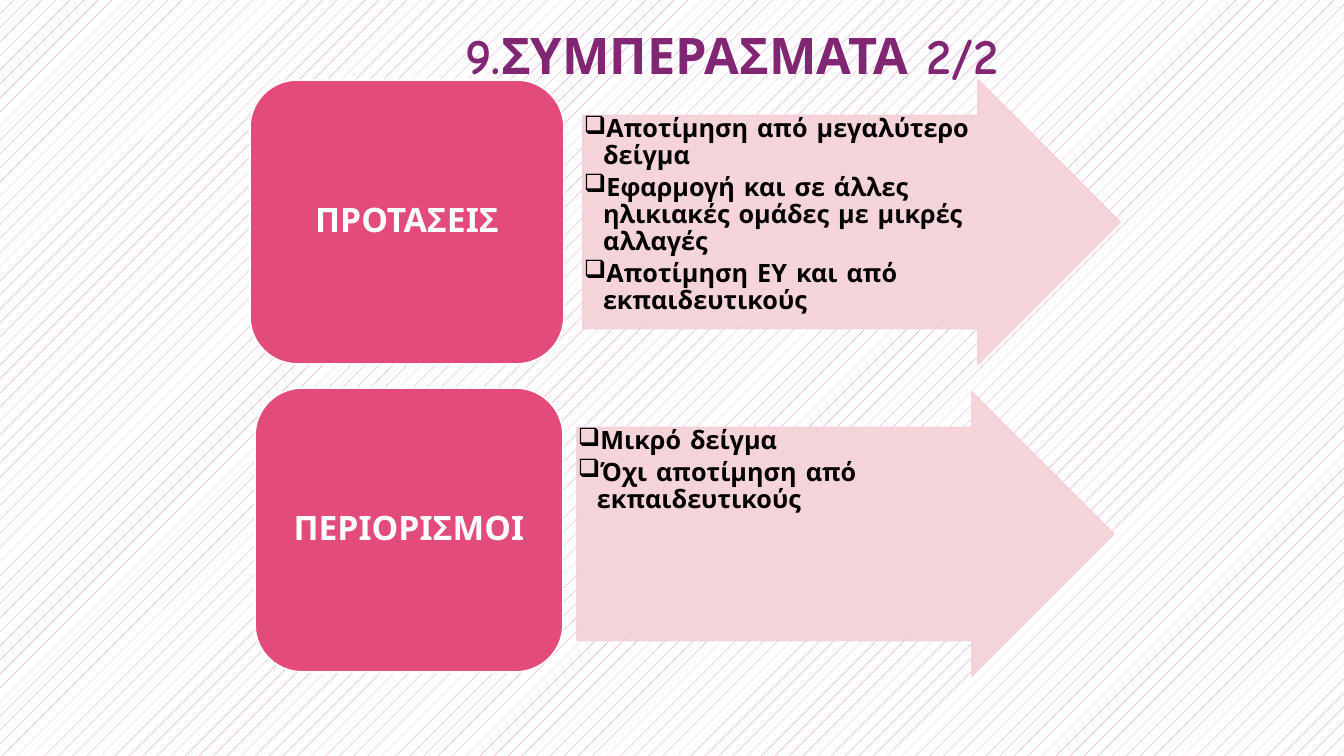
from lxml.etree import SubElement
from pptx import Presentation
from pptx.dml.color import RGBColor
from pptx.enum.dml import MSO_PATTERN
from pptx.enum.shapes import MSO_SHAPE
from pptx.enum.text import MSO_ANCHOR, PP_ALIGN
from pptx.oxml.ns import qn
from pptx.util import Emu, Pt

SLIDE_SIZE = (1344, 756)
SCALE = 12192000 / SLIDE_SIZE[0]
FONT = "Comic Neue"
COLOURS = {
    "title": "812673",
    "card": "E34B7A",
    "arrow": "F4D0D7",
    "pattern": "D87ACA",
    "white": "FFFFFF",
    "black": "000000",
}
CARD_PADDING = 14
ARROW_SIZE = (537, 284)
ARROW_TEXT_SIZE = (431, 214)
TITLE_FORMAT = {"alignment": PP_ALIGN.CENTER, "line_spacing": 0.9}
CARD_FORMAT = {"alignment": PP_ALIGN.CENTER, "line_spacing": 0.9}
BULLET_FORMAT = {"level": 1, "line_spacing": 0.9, "space_after": Pt(3)}
CENTRED_FRAME = {"word_wrap": True, "vertical_anchor": MSO_ANCHOR.MIDDLE}
ARROW_FRAME = {
    "word_wrap": True,
    "vertical_anchor": MSO_ANCHOR.TOP,
    **{f"margin_{side}": Emu(9144) for side in ("left", "top", "right", "bottom")},
}
ROWS = [
    {
        "heading": "ΠΡΟΤΑΣΕΙΣ",
        "card": (250, 80, 314, 284),
        "arrow": (583, 80),
        "points": [
            "Αποτίμηση από μεγαλύτερο δείγμα",
            "Εφαρμογή και σε άλλες ηλικιακές ομάδες με μικρές αλλαγές",
            "Αποτίμηση ΕΥ και από εκπαιδευτικούς",
        ],
    },
    {
        "heading": "ΠΕΡΙΟΡΙΣΜΟΙ",
        "card": (255, 388, 308, 284),
        "arrow": (577, 392),
        "points": ["Μικρό δείγμα", "Όχι αποτίμηση από εκπαιδευτικούς"],
    },
]


def px(length):
    return Emu(round(length * SCALE))


def colour(name):
    return RGBColor.from_string(COLOURS[name])


def set_attributes(target, values):
    for name, value in values.items():
        setattr(target, name, value)


def set_background(slide):
    fill = slide.background.fill
    fill.patterned()
    fill.pattern = MSO_PATTERN.PERCENT_5
    fill.fore_color.rgb = colour("pattern")
    fill.back_color.rgb = colour("white")


def add_bullet(paragraph):
    properties = paragraph._p.get_or_add_pPr()
    properties.set("marL", str(px(19)))
    properties.set("indent", str(-px(19)))
    SubElement(properties, qn("a:buChar")).set("char", "❑")


def add_text(slide, box, texts, size, colour_name, frame_format, paragraph_format, bulleted=False):
    frame = slide.shapes.add_textbox(*map(px, box)).text_frame
    set_attributes(frame, frame_format)
    for index, text in enumerate(texts):
        paragraph = frame.add_paragraph() if index else frame.paragraphs[0]
        if bulleted:
            add_bullet(paragraph)
        set_attributes(paragraph, paragraph_format)
        run = paragraph.add_run()
        run.text = text
        set_attributes(run.font, {"name": FONT, "size": Pt(size), "bold": True})
        run.font.color.rgb = colour(colour_name)


def add_panel(slide, kind, box, fill_name, line_name):
    shape = slide.shapes.add_shape(kind, *map(px, box))
    shape.shadow.inherit = False
    shape.fill.solid()
    shape.fill.fore_color.rgb = colour(fill_name)
    shape.line.color.rgb = colour(line_name)
    shape.line.width = Pt(1.25)
    return shape


def add_arrow(slide, left, top, points):
    arrow = add_panel(slide, MSO_SHAPE.RIGHT_ARROW, (left, top, *ARROW_SIZE), "arrow", "arrow")
    arrow.adjustments[0] = 0.75
    arrow.adjustments[1] = 0.5
    for colour_element in arrow._element.spPr.iter(qn("a:srgbClr")):
        SubElement(colour_element, qn("a:alpha")).set("val", "90000")
    text_top = top + (ARROW_SIZE[1] - ARROW_TEXT_SIZE[1]) // 2
    box = (left, text_top, *ARROW_TEXT_SIZE)
    add_text(slide, box, points, 18, "black", ARROW_FRAME, BULLET_FORMAT, bulleted=True)


def add_card(slide, box, heading):
    add_panel(slide, MSO_SHAPE.ROUNDED_RECTANGLE, box, "card", "white")
    left, top, width, height = box
    text_box = (
        left + CARD_PADDING,
        top + CARD_PADDING,
        width - 2 * CARD_PADDING,
        height - 2 * CARD_PADDING,
    )
    add_text(slide, text_box, [heading], 24, "white", CENTRED_FRAME, CARD_FORMAT)


def main():
    presentation = Presentation()
    presentation.slide_width, presentation.slide_height = map(px, SLIDE_SIZE)
    slide = presentation.slides.add_slide(presentation.slide_layouts[6])
    set_background(slide)
    title_box = (138, 22, 1206, 72)
    add_text(slide, title_box, ["9.ΣΥΜΠΕΡΑΣΜΑΤΑ 2/2 "], 36, "title", CENTRED_FRAME, TITLE_FORMAT)
    for row in ROWS:
        add_arrow(slide, *row["arrow"], row["points"])
        add_card(slide, row["card"], row["heading"])
    presentation.save("out.pptx")


if __name__ == "__main__":
    main()
